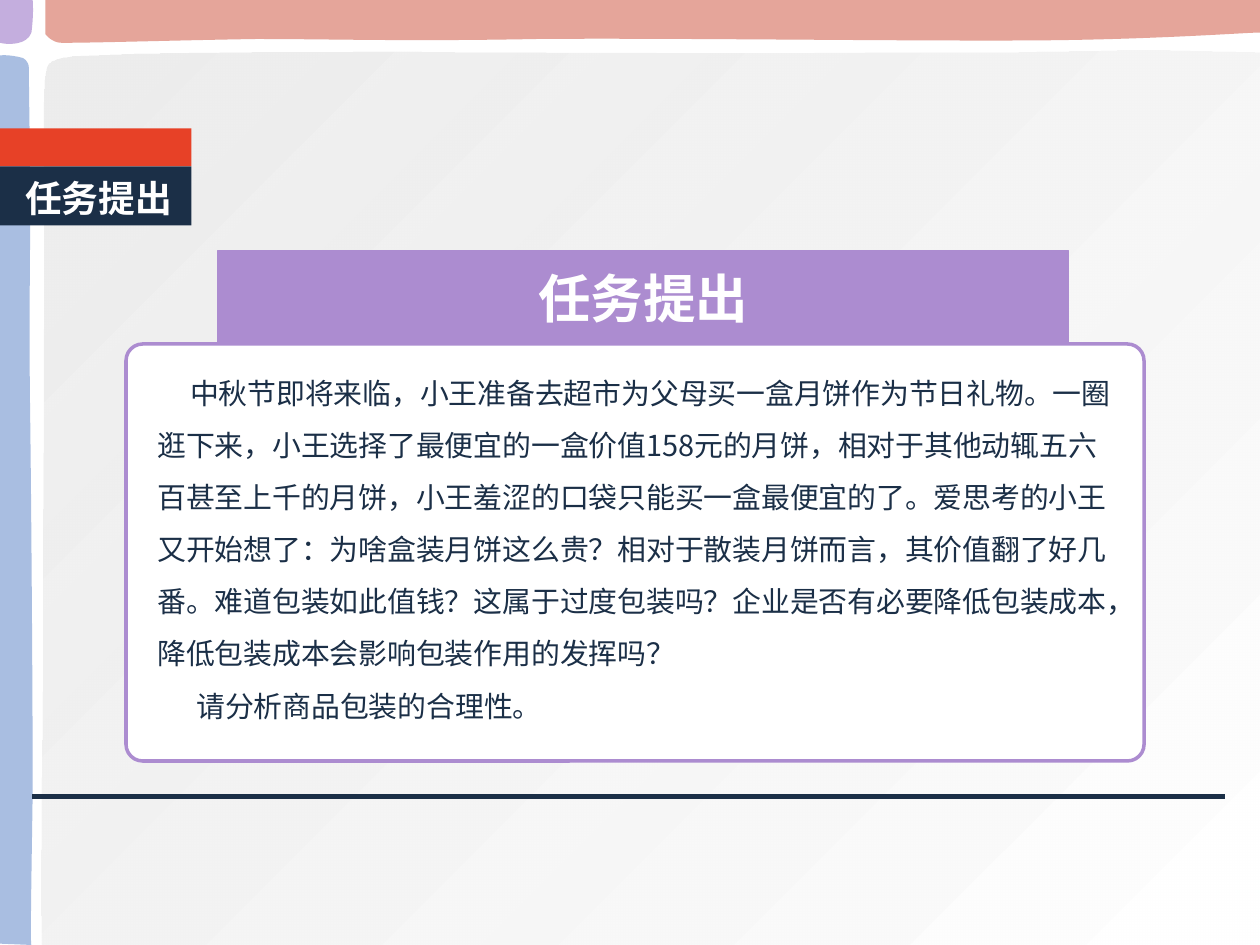
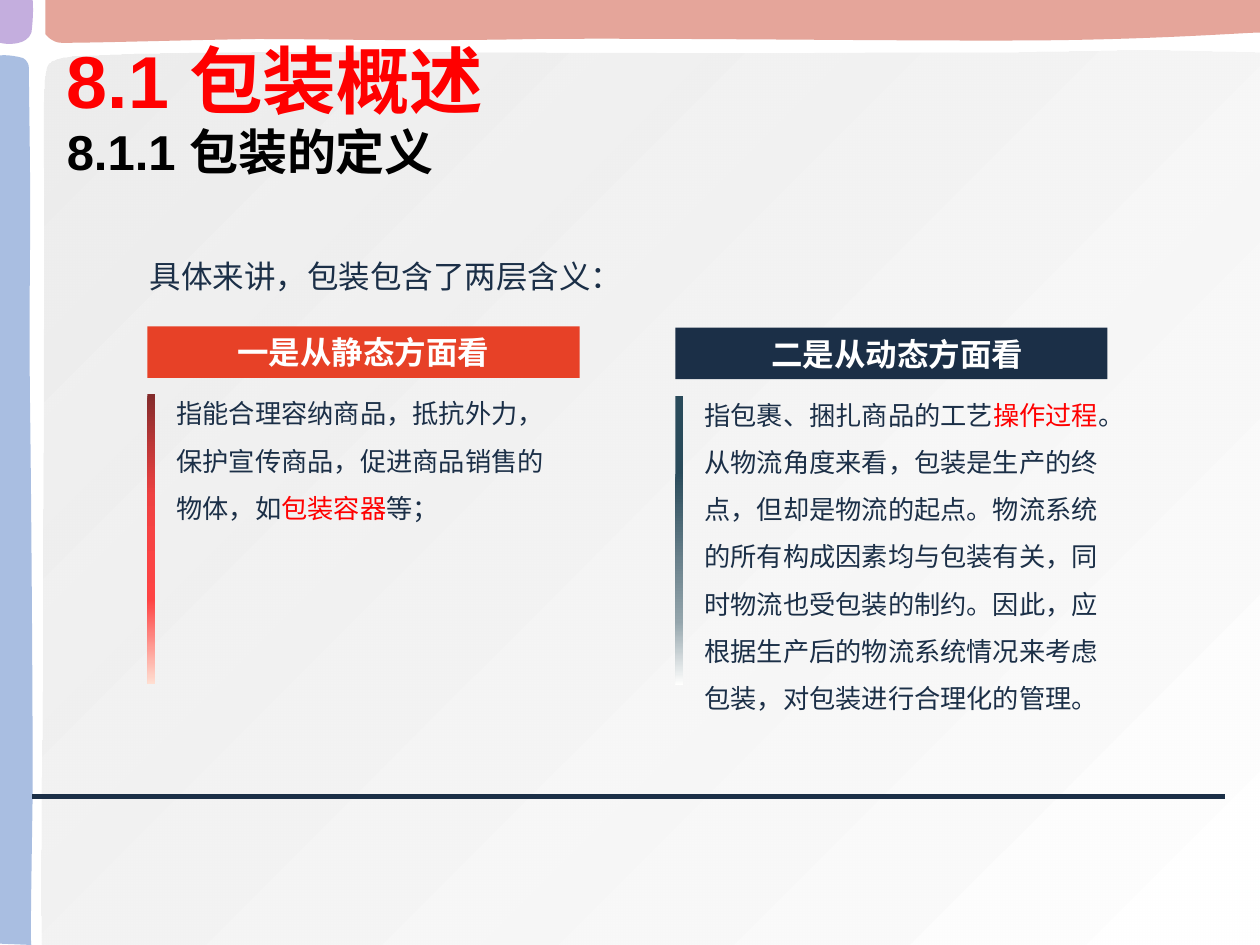
from lxml.etree import SubElement
from pptx import Presentation
from pptx.dml.color import RGBColor
from pptx.enum.shapes import MSO_CONNECTOR, MSO_SHAPE as Shape
from pptx.enum.text import MSO_ANCHOR as Anchor, MSO_AUTO_SIZE, PP_ALIGN as Align
from pptx.oxml.ns import qn
from pptx.util import Inches, Pt

NAVY, ORANGE, PURPLE = "1B2F47", "E74127", "AC8CD0"
WHITE, BLACK, RED = "FFFFFF", "000000", "FF0000"
CJK, LATIN = "Noto Sans CJK SC", "Arial"

PANEL_STOPS = [(0, "E6E6E6", 70), (100, WHITE, 100)]
RED_STOPS = [(0, "832B2B", 100), (19, "C13838", 100), (30, "E03E3E", 100),
             (35, "EF4141", 100), (49, "F74343", 100), (59, "FB4444", 100),
             (71, "FE4444", 100), (100, "FFDFD2", 100)]
TEAL_STOPS = [(26, "294A5A", 100), (78, "94A5AC", 100), (100, "FFFFFE", 100)]

PANEL = [(10, 7.5), (10, 0.42),
         (8.86, 0.38, 8.55, 0.42, 7.6, 0.42), (6.66, 0.42, 5.5, 0.43, 4.33, 0.42),
         (3.16, 0.41, 1.23, 0.41, 0.57, 0.45), (0.36, 0.48, 0.36, 0.49, 0.35, 0.73),
         (0.34, 0.96, 0.35, 1.1, 0.35, 1.82), (0.35, 2.56, 0.34, 4.12, 0.34, 5.06),
         (0.34, 6.01, 0.32, 6.62, 0.33, 7.5)]
TOP_BAND = [(10, 0), (10, 0.26),
            (10.01, 0.25, 9.28, 0.31, 8.32, 0.32), (7.36, 0.33, 5.31, 0.3, 4.26, 0.31),
            (3.21, 0.33, 2.65, 0.31, 2.03, 0.31), (1.4, 0.32, 0.77, 0.34, 0.49, 0.34),
            (0.41, 0.34, 0.36, 0.27, 0.36, 0.27), (0.36, 0.27, 0.36, 0.14, 0.36, 0)]
SIDE_BAND = [(0, 7.49), (0.25, 7.5),
             (0.24, 7.51, 0.25, 6.98, 0.26, 6.28), (0.26, 5.58, 0.25, 4.07, 0.24, 3.3),
             (0.23, 2.54, 0.24, 2.12, 0.24, 1.67), (0.24, 1.21, 0.23, 0.75, 0.23, 0.54),
             (0.23, 0.48, 0.18, 0.46, 0.18, 0.46), (0.07, 0.43, 0, 0.44, 0, 0.44)]
CORNER = [(0, 0), (0.26, 0), (0.27, 0.12, 0.25, 0.26, 0.25, 0.26),
          (0.23, 0.31, 0.19, 0.33, 0.15, 0.34), (0.07, 0.36, 0, 0.34, 0, 0.34)]

STORY = ("中秋节即将来临，小王准备去超市为父母买一盒月饼作为节日礼物。一圈逛下来，"
         "小王选择了最便宜的一盒价值158元的月饼，相对于其他动辄五六百甚至上千的月饼，"
         "小王羞涩的口袋只能买一盒最便宜的了。爱思考的小王又开始想了：为啥盒装月饼这么贵？"
         "相对于散装月饼而言，其价值翻了好几番。难道包装如此值钱？这属于过度包装吗？"
         "企业是否有必要降低包装成本，降低包装成本会影响包装作用的发挥吗？")
STATIC_TEXT = [("指能合理容纳商品，抵抗外力，保护宣传商品，促进商品销售的物体，如", NAVY),
               ("包装容器", RED), ("等；", NAVY)]
DYNAMIC_TEXT = [("指包裹、捆扎商品的工艺", NAVY), ("操作过程", RED),
                ("。从物流角度来看，包装是生产的终点，但却是物流的起点。"
                 "物流系统的所有构成因素均与包装有关，同时物流也受包装的制约。"
                 "因此，应根据生产后的物流系统情况来考虑包装，对包装进行合理化的管理。", NAVY)]


def rgb(value):
    """Turn a hex string into a colour."""
    return RGBColor.from_string(value)


def place(shape, box):
    """Move a shape to a box given in inches."""
    shape.left, shape.top, shape.width, shape.height = map(Inches, box)


def paint(shape, fill, line=None, width=0.75):
    """Give a shape a solid fill and an optional outline."""
    shape.fill.solid()
    shape.fill.fore_color.rgb = rgb(fill)
    if line:
        shape.line.color.rgb = rgb(line)
        shape.line.width = Pt(width)
    else:
        shape.line.fill.background()


def add_alpha(colour, percent):
    """Set the opacity of a colour element."""
    SubElement(colour, qn("a:alpha")).set("val", str(percent * 1000))


def paint_gradient(shape, stops, angle):
    """Fill a shape with a linear gradient of any number of stops."""
    shape.fill.gradient()
    shape.line.fill.background()
    gradient = shape._element.spPr.find(qn("a:gradFill"))
    for child in list(gradient):
        gradient.remove(child)
    stop_list = SubElement(gradient, qn("a:gsLst"))
    for position, value, alpha in stops:
        stop = SubElement(stop_list, qn("a:gs"), pos=str(position * 1000))
        colour = SubElement(stop, qn("a:srgbClr"), val=value)
        if alpha < 100:
            add_alpha(colour, alpha)
    SubElement(gradient, qn("a:lin"), ang=str(angle * 60000), scaled="0")


def add_block(page, box, kind=Shape.RECTANGLE):
    """Add a preset shape without a shadow."""
    shape = page.shapes.add_shape(kind, *map(Inches, box))
    shape.shadow.inherit = False
    return shape


def set_frame(shape, anchor, margins=(0, 0, 0, 0), wrap=True):
    """Set wrapping, anchor and insets of a text frame and return it."""
    frame = shape.text_frame
    frame.auto_size = MSO_AUTO_SIZE.NONE
    frame.word_wrap = wrap
    frame.vertical_anchor = anchor
    (frame.margin_left, frame.margin_top,
     frame.margin_right, frame.margin_bottom) = map(Inches, margins)
    return frame


def style(para, size, colour, bold=False, align=Align.LEFT, latin=CJK, spacing=None):
    """Format a whole paragraph."""
    para.alignment = align
    para.space_before = para.space_after = Pt(0)
    if spacing:
        para.line_spacing = Pt(spacing)
    font = para.font
    font.size, font.bold, font.name = Pt(size), bold, latin
    font.color.rgb = rgb(colour)
    SubElement(font._element, qn("a:ea"), typeface=CJK)


def write(shape, text, size, colour, bold=True, align=Align.CENTER,
          margins=(0, 0, 0, 0), wrap=True):
    """Write one vertically centred line in a shape."""
    para = set_frame(shape, Anchor.MIDDLE, margins, wrap).paragraphs[0]
    para.text = text
    style(para, size, colour, bold, align)


def add_outline(page, segments):
    """Draw a closed outline of lines (2 numbers) and cubic curves (6 numbers)."""
    corners = [tuple(map(Inches, segment[-2:])) for segment in segments]
    builder = page.shapes.build_freeform(*corners[0])
    builder.add_line_segments(corners[1:], close=True)
    shape = builder.convert_to_shape()
    shape.shadow.inherit = False
    lines = list(shape._element.iter(qn("a:lnTo")))
    for line, segment in zip(lines, segments[1:]):
        if len(segment) == 6:
            line.tag = qn("a:cubicBezTo")
            line.remove(line[0])
            for x, y in zip(segment[::2], segment[1::2]):
                SubElement(line, qn("a:pt"), x=str(Inches(x) - shape.left),
                           y=str(Inches(y) - shape.top))
    return shape


def add_rule(page):
    """Draw the navy rule near the foot."""
    rule = page.shapes.add_connector(
        MSO_CONNECTOR.STRAIGHT, Inches(9.72), Inches(6.32), Inches(0.25), Inches(6.32))
    rule.line.color.rgb = rgb(NAVY)
    rule.line.width = Pt(3)
    SubElement(rule._element.spPr, qn("a:effectLst"))
    return rule


def furnish_layout(layout, page):
    """Draw the shared panes and rule on a page and hand them to its layout."""
    panel = add_outline(page, PANEL)
    paint_gradient(panel, PANEL_STOPS, 45)
    parts = [panel]
    for segments, colour in ((TOP_BAND, "DA7F70"), (SIDE_BAND, "85A3D5"), (CORNER, PURPLE)):
        band = add_outline(page, segments)
        paint(band, colour)
        add_alpha(band._element.spPr.find(qn("a:solidFill"))[0], 70)
        parts.append(band)
    parts.append(add_rule(page))
    for part in parts:
        layout.shapes._spTree.append(part._element)


def add_section_tag(page, text, left, top, width):
    """Add the two-coloured tag at the left edge."""
    label = add_block(page, (left, top + 0.3, width, 0.47))
    paint(label, NAVY)
    write(label, text, 21, WHITE, align=Align.LEFT, margins=(0.2, 0.03, 0, 0))
    paint(add_block(page, (left, top, width, 0.3)), ORANGE)


def add_story_card(page, left, top, width, height):
    """Add the rounded card with the task and its title banner."""
    title = page.shapes.title
    place(title, (left + 0.73, top - 0.74, 6.75, 0.74))
    paint(title, PURPLE, PURPLE)
    write(title, "任务提出", 30, WHITE)

    card = add_block(page, (left, top, width, height), Shape.ROUNDED_RECTANGLE)
    card.adjustments[0] = 0.04
    paint(card, WHITE, PURPLE, 2)

    story = page.shapes.add_textbox(
        Inches(left + 0.25), Inches(top + 0.11), Inches(width - 0.41), Inches(height - 0.3))
    frame = set_frame(story, Anchor.TOP)
    for index, (text, indent) in enumerate([(STORY, 0.26), ("请分析商品包装的合理性。", 0.31)]):
        para = frame.add_paragraph() if index else frame.paragraphs[0]
        para.text = text
        style(para, 16.5, NAVY, spacing=29.8)
        para._p.pPr.set("indent", str(Inches(indent)))


def add_chapter_title(page, left, top, width):
    """Write the chapter and section headings in the title placeholder."""
    title = page.shapes.title
    place(title, (left, top, width, 1.2))
    frame = set_frame(title, Anchor.TOP)
    headings = [("8.1 包装概述", 42, RED, 50), ("8.1.1 包装的定义", 28, BLACK, 33)]
    for index, (text, size, colour, spacing) in enumerate(headings):
        para = frame.add_paragraph() if index else frame.paragraphs[0]
        para.text = text
        style(para, size, colour, True, latin=LATIN, spacing=spacing)


def add_meaning(page, left, top, heading, colour, stops, spans, text_width, nudge=0):
    """Add one column: heading bar, fading side bar and text."""
    header = add_block(page, (left, top, 3.43, 0.41))
    paint(header, colour)
    write(header, heading, 18, WHITE, margins=(nudge, 0, 0, 0))
    paint_gradient(add_block(page, (left, top + 0.54, 0.06, 2.3)), stops, 90)
    body = page.shapes.add_textbox(
        Inches(left + 0.23), Inches(top + 0.44), Inches(text_width), Inches(2.65))
    para = set_frame(body, Anchor.TOP).paragraphs[0]
    for text, span_colour in spans:
        span = para.add_run()
        span.text = text
        span.font.color.rgb = rgb(span_colour)
    style(para, 15, NAVY, spacing=27)


def build_task_page(page):
    """Fill the slide that sets the task."""
    add_section_tag(page, "任务提出", 0, 1.02, 1.52)
    add_story_card(page, 1, 2.73, 8.08, 3.31)


def build_definition_page(page):
    """Fill the slide that defines packaging."""
    add_chapter_title(page, 0.53, 0.28, 7.2)
    intro = page.shapes.add_textbox(Inches(1.19), Inches(1.99), Inches(3.75), Inches(0.4))
    write(intro, "具体来讲，包装包含了两层含义：", 18, NAVY, False, Align.LEFT, wrap=False)
    add_meaning(page, 1.17, 2.59, "一是从静态方面看", ORANGE, RED_STOPS, STATIC_TEXT, 3.08)
    add_meaning(page, 5.36, 2.6, "二是从动态方面看", NAVY, TEAL_STOPS, DYNAMIC_TEXT, 3.2, 0.09)


def main():
    """Build and save the deck."""
    deck = Presentation()
    deck.slide_width, deck.slide_height = Inches(10), Inches(7.5)
    layout = deck.slide_layouts[5]
    pages = [deck.slides.add_slide(layout) for _ in range(2)]
    furnish_layout(layout, pages[0])
    build_task_page(pages[0])
    build_definition_page(pages[1])
    deck.save("out.pptx")


if __name__ == "__main__":
    main()
